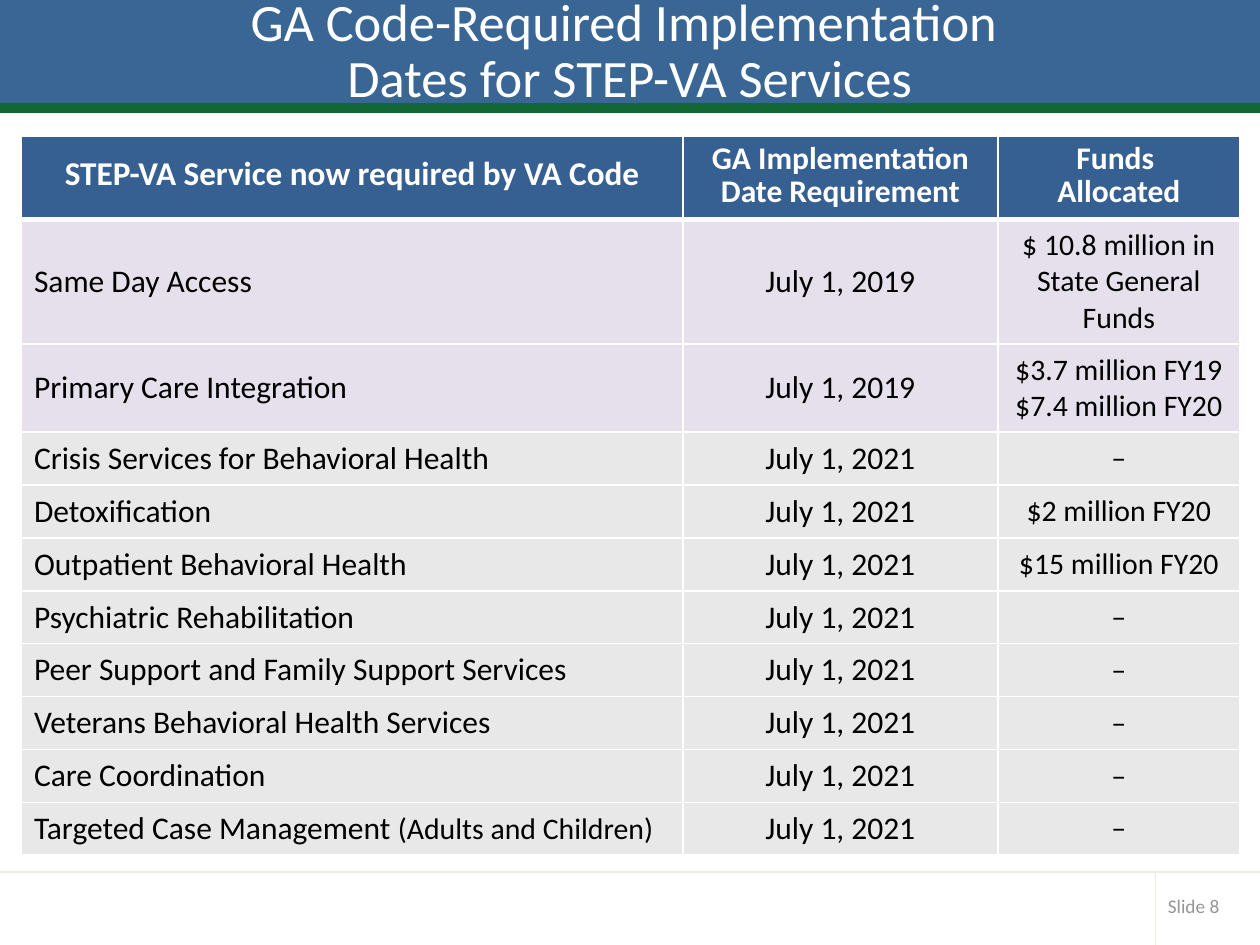
from typing import NamedTuple

from lxml import etree
from pptx import Presentation
from pptx import util as u
from pptx.dml.color import RGBColor
from pptx.enum import shapes, text
from pptx.oxml import ns

WHITE = RGBColor(0xFF, 0xFF, 0xFF)
BLACK = RGBColor(0x00, 0x00, 0x00)
BAND_BLUE = RGBColor(0x3A, 0x66, 0x95)
BAND_GREEN = RGBColor(0x13, 0x67, 0x35)
HEADER_BLUE = RGBColor(0x37, 0x60, 0x92)
LILAC = RGBColor(0xE6, 0xE0, 0xEC)
GREY = RGBColor(0xE8, 0xE8, 0xE8)
RULE = RGBColor(0xEE, 0xEC, 0xE1)
NUMBER_GREY = RGBColor(0x96, 0x96, 0x96)

CENTER = text.PP_ALIGN.CENTER
LEFT = text.PP_ALIGN.LEFT


class Band(NamedTuple):
    top: float
    height: float
    color: RGBColor


class Rule(NamedTuple):
    x1: float
    y1: float
    x2: float
    y2: float


class Service(NamedTuple):
    name: str
    date: str = "July 1, 2021"
    funds: str = "–"
    note: str = ""
    fill: RGBColor = GREY
    height: float = 0.42


BANDS = [Band(0, 0.83, BAND_BLUE), Band(0.83, 0.05, BAND_GREEN)]
RULES = [Rule(0, 6.92, 10, 6.92), Rule(9.17, 6.92, 9.17, 7.5)]
HEADERS = [
    ("STEP-VA Service now required by VA Code", 19),
    ("GA Implementation Date Requirement", 18),
    ("Funds \vAllocated", 18),
]
COLUMN_WIDTHS = [5.25, 2.5, 1.92]
HEADER_HEIGHT = 0.66
SERVICES = [
    Service("Same Day Access", "July 1, 2019",
            "$ 10.8 million in State General Funds", fill=LILAC, height=0.99),
    Service("Primary Care Integration", "July 1, 2019",
            "$3.7 million FY19\n$7.4 million FY20", fill=LILAC, height=0.7),
    Service("Crisis Services for Behavioral Health"),
    Service("Detoxification", funds="$2 million FY20"),
    Service("Outpatient Behavioral Health", funds="$15 million FY20"),
    Service("Psychiatric Rehabilitation"),
    Service("Peer Support and Family Support Services"),
    Service("Veterans Behavioral Health Services"),
    Service("Care Coordination"),
    Service("Targeted Case Management ", note="(Adults and Children)"),
]


def set_font(font, size: float, color: RGBColor, bold: bool = False) -> None:
    values = {"name": "Calibri", "size": u.Pt(size), "bold": bold}
    for name, value in values.items():
        setattr(font, name, value)
    font.color.rgb = color


def add_band(page, band: Band) -> None:
    box = page.shapes.add_shape(shapes.MSO_SHAPE.RECTANGLE, 0, u.Inches(band.top),
                                u.Inches(10), u.Inches(band.height))
    box.shadow.inherit = False
    box.fill.solid()
    box.fill.fore_color.rgb = band.color
    box.line.color.rgb = band.color
    box.line.width = u.Pt(2)


def add_rule(page, rule: Rule) -> None:
    line = page.shapes.add_connector(shapes.MSO_CONNECTOR.STRAIGHT,
                                     *(u.Inches(value) for value in rule))
    line.line.color.rgb = RULE
    line.line.width = u.Pt(1)
    etree.SubElement(line.element.spPr, ns.qn("a:effectLst"))


def format_title(page) -> None:
    title = page.shapes.title
    place = {"left": 0, "top": 0, "width": u.Inches(10), "height": u.Inches(0.83)}
    for name, value in place.items():
        setattr(title, name, value)
    frame = title.text_frame
    frame.text = "GA Code-Required Implementation \vDates for STEP-VA Services"
    frame.word_wrap = True
    frame.auto_size = text.MSO_AUTO_SIZE.NONE
    frame.vertical_anchor = text.MSO_ANCHOR.MIDDLE
    para = frame.paragraphs[0]
    para.alignment = CENTER
    para.line_spacing = u.Pt(32)
    set_font(para.font, 30, WHITE)
    # Bring the title in front of the bands
    title.element.getparent().append(title.element)


def add_slide_number(page) -> None:
    box = page.shapes.add_textbox(u.Inches(9.17), u.Inches(7.04),
                                  u.Inches(0.74), u.Inches(0.29))
    frame = box.text_frame
    frame.word_wrap = True
    frame.vertical_anchor = text.MSO_ANCHOR.MIDDLE
    frame.text = "Slide 8"
    set_font(frame.paragraphs[0].runs[0].font, 11, NUMBER_GREY)


def set_borders(cell, top: float = 1, bottom: float = 1) -> None:
    properties = cell._tc.get_or_add_tcPr()
    for side, width in {"L": 1, "R": 1, "T": top, "B": bottom}.items():
        line = etree.SubElement(properties, ns.qn(f"a:ln{side}"), w=str(u.Pt(width)))
        fill = etree.SubElement(line, ns.qn("a:solidFill"))
        etree.SubElement(fill, ns.qn("a:srgbClr"), val=str(WHITE))


def fill_cell(cell, words: str, size: float, fill: RGBColor, alignment=CENTER,
              color: RGBColor = BLACK, bold: bool = False, spacing=None) -> None:
    cell.fill.solid()
    cell.fill.fore_color.rgb = fill
    cell.vertical_anchor = text.MSO_ANCHOR.MIDDLE
    cell.text = words
    for para in cell.text_frame.paragraphs:
        para.alignment = alignment
        para.line_spacing = spacing
        for span in para.runs:
            set_font(span.font, size, color, bold)


def add_services_table(page) -> None:
    heights = [HEADER_HEIGHT] + [service.height for service in SERVICES]
    table = page.shapes.add_table(
        len(heights), len(COLUMN_WIDTHS), u.Inches(0.17), u.Inches(1.08),
        u.Inches(sum(COLUMN_WIDTHS)), u.Inches(sum(heights))).table
    for column, width in zip(table.columns, COLUMN_WIDTHS):
        column.width = u.Inches(width)
    for row, height in zip(table.rows, heights):
        row.height = u.Inches(height)

    # Header row, with a thick line below it
    for cell, (words, size) in zip(table.rows[0].cells, HEADERS):
        set_borders(cell, bottom=3)
        fill_cell(cell, words, size, HEADER_BLUE, color=WHITE, bold=True,
                  spacing=u.Pt(19))

    # One row for each service
    for number, service in enumerate(SERVICES, start=1):
        cells = list(table.rows[number].cells)
        for cell in cells:
            set_borders(cell, top=3 if number == 1 else 1)
        fill_cell(cells[0], service.name, 18, service.fill, LEFT)
        fill_cell(cells[1], service.date, 18, service.fill)
        fill_cell(cells[2], service.funds, 17, service.fill)
        if service.note:
            span = cells[0].text_frame.paragraphs[0].add_run()
            span.text = service.note
            set_font(span.font, 17, BLACK)


def main() -> None:
    deck = Presentation()
    deck.slide_width, deck.slide_height = u.Inches(10), u.Inches(7.5)
    page = deck.slides.add_slide(deck.slide_layouts.get_by_name("Title Only"))
    for band in BANDS:
        add_band(page, band)
    for rule in RULES:
        add_rule(page, rule)
    add_slide_number(page)
    format_title(page)
    add_services_table(page)
    deck.save("out.pptx")


if __name__ == "__main__":
    main()
